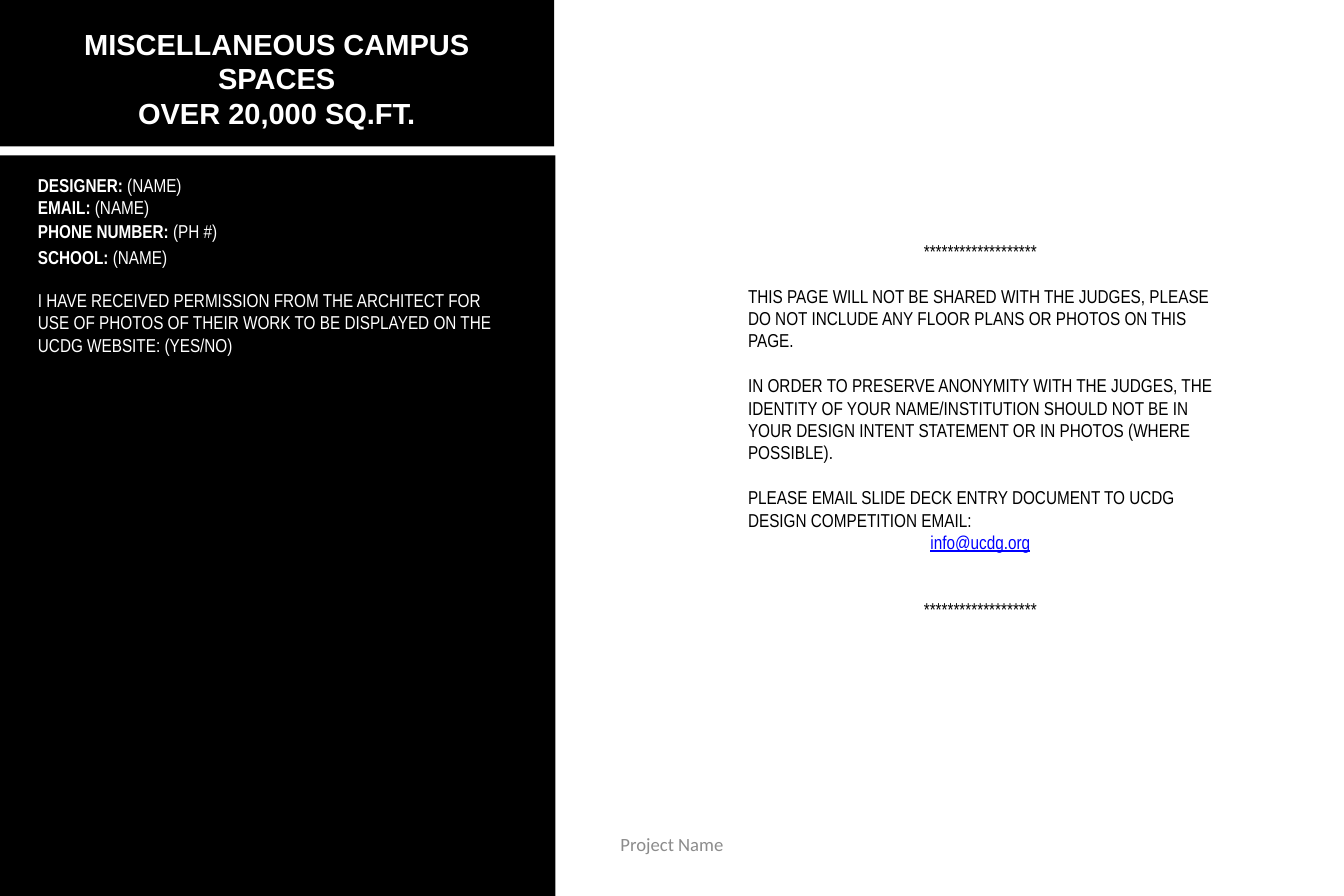
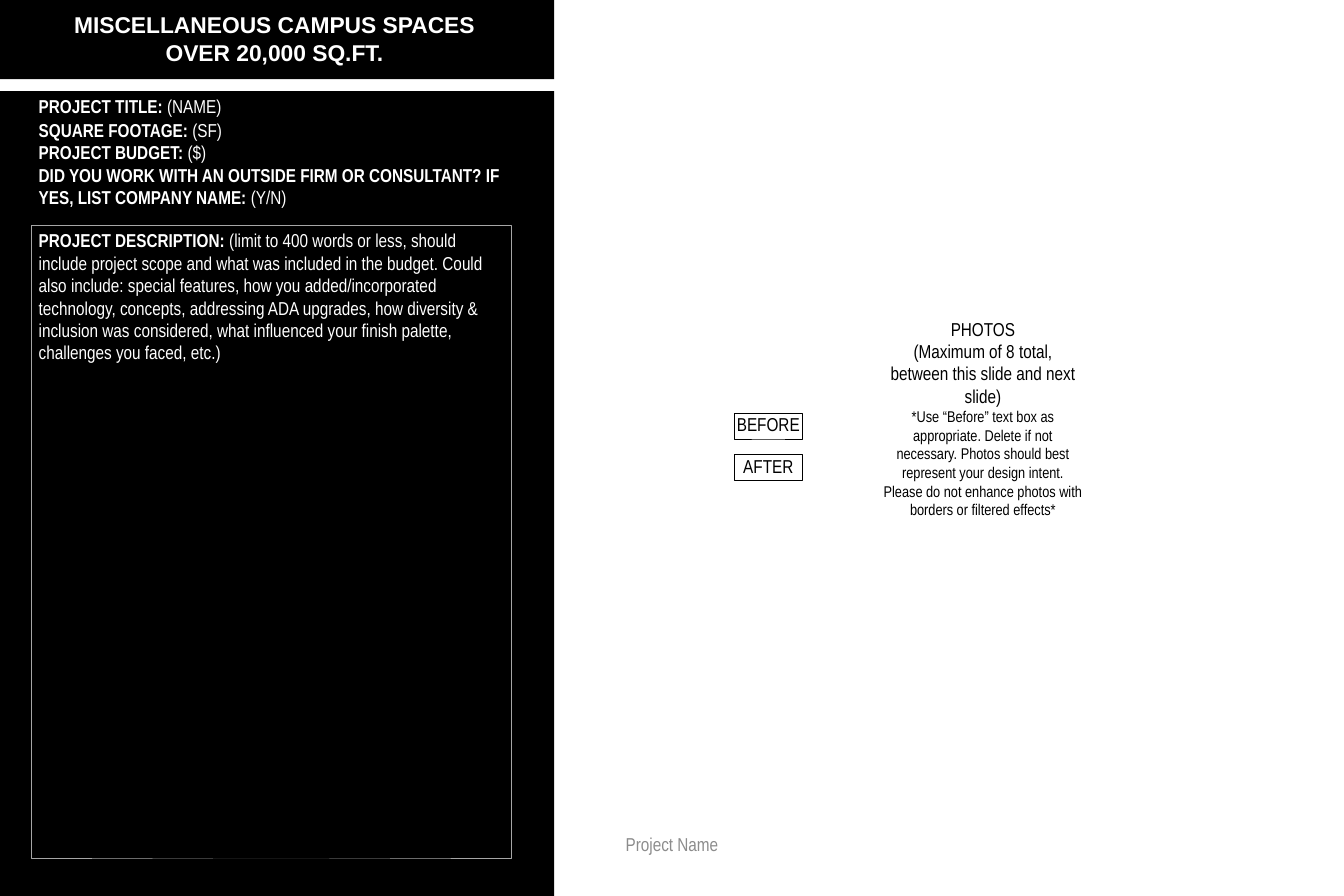
from pptx import Presentation
from pptx.dml.color import RGBColor
from pptx.enum.shapes import MSO_SHAPE
from pptx.enum.text import MSO_ANCHOR, PP_ALIGN
from pptx.util import Inches, Pt

BLACK, WHITE, GRAY, RULE, LINK = "000000", "FFFFFF", "8C8C8C", "A6A6A6", "0000FF"
NARROW = "Arial Narrow"
LINE = 21.6  # height of one 18 pt text line, in points
PANEL_W, FIELD_W = 7.42, 6.42
CENTER = PP_ALIGN.CENTER


def rgb(color):
    return RGBColor.from_string(color)


def field(label, value):
    """A paragraph with a bold label and a plain value."""
    return dict(runs=[(label + " ", {"bold": True}), (value, {})])


def para(text, align=None, before=0, **style):
    return dict(runs=[(text, style)], align=align, before=before)


class Deck:
    def __init__(self, width, height):
        self.prs = Presentation()
        self.prs.slide_width, self.prs.slide_height = Inches(width), Inches(height)
        self.height = height
        self.s = None

    def new_slide(self, title_h, title_size, title_box, panel_top, footer_font, panel_w=PANEL_W):
        """Title band, side panel and footer shared by all slides."""
        self.s = self.prs.slides.add_slide(self.prs.slide_layouts[6])
        self.box(0, 0, PANEL_W, title_h, fill=BLACK)
        self.box(0, panel_top, panel_w, self.height - panel_top, fill=BLACK)
        lines = ("MISCELLANEOUS CAMPUS SPACES", "OVER 20,000 SQ.FT.")
        self.text(*title_box, [para(t, CENTER, bold=True) for t in lines],
                  size=title_size, font="Arial", color=WHITE)
        self.text(6.12, 11.16, 5.76, 0.6, [para("Project Name", CENTER)],
                  font=footer_font, color=GRAY, inset=False)

    def box(self, x, y, w, h, fill=None, line=None, weight=0.75):
        sp = self.s.shapes.add_shape(MSO_SHAPE.RECTANGLE, Inches(x), Inches(y), Inches(w), Inches(h))
        sp.shadow.inherit = False
        if fill:
            sp.fill.solid()
            sp.fill.fore_color.rgb = rgb(fill)
        else:
            sp.fill.background()
        if line:
            sp.line.color.rgb = rgb(line)
            sp.line.width = Pt(weight)
        else:
            sp.line.fill.background()
        return sp

    def text(self, x, y, w, h, paras, **style):
        sp = self.s.shapes.add_textbox(Inches(x), Inches(y), Inches(w), Inches(h))
        self.fill_text(sp, paras, **style)

    def fill_text(self, sp, paras, size=18, font=NARROW, color=BLACK, inset=True):
        tf = sp.text_frame
        tf.word_wrap = True
        tf.vertical_anchor = MSO_ANCHOR.TOP
        if not inset:
            tf.margin_left = tf.margin_right = tf.margin_top = tf.margin_bottom = 0
        for i, item in enumerate(paras):
            p = tf.paragraphs[0] if i == 0 else tf.add_paragraph()
            p.alignment = item.get("align") or PP_ALIGN.LEFT
            p.space_before = Pt(item.get("before", 0))
            for content, style in item["runs"]:
                r = p.add_run()
                r.text = content
                r.font.name = font
                r.font.size = Pt(style.get("size", size))
                r.font.bold = style.get("bold", False)
                r.font.underline = style.get("underline", False)
                r.font.color.rgb = rgb(style.get("color", color))


def entrant_slide(deck):
    deck.new_slide(1.96, 28, (0.28, 0.3, 6.85, 1.51), 2.08, "Calibri", panel_w=7.44)

    # Contact fields
    contacts = [(2.28, "DESIGNER:", "(NAME)"), (2.58, "EMAIL:", "(NAME)"),
                (2.89, "PHONE NUMBER:", "(PH #)"), (3.25, "SCHOOL:", "(NAME)")]
    for y, label, value in contacts:
        deck.text(0.41, y, FIELD_W, 0.4, [field(label, value)], color=WHITE)
    deck.text(0.41, 3.82, FIELD_W, 1.01, [para(
        "I HAVE RECEIVED PERMISSION FROM THE ARCHITECT FOR USE OF PHOTOS OF THEIR WORK "
        "TO BE DISPLAYED ON THE UCDG WEBSITE: (YES/NO)")], color=WHITE)

    # Submission notice
    stars = "*" * 19
    deck.text(9.92, 3.16, FIELD_W, 5.55, [
        para(stars, CENTER),
        para("THIS PAGE WILL NOT BE SHARED WITH THE JUDGES, PLEASE DO NOT INCLUDE ANY "
             "FLOOR PLANS OR PHOTOS ON THIS PAGE.", before=LINE),
        para("IN ORDER TO PRESERVE ANONYMITY WITH THE JUDGES, THE IDENTITY OF YOUR "
             "NAME/INSTITUTION SHOULD NOT BE IN YOUR DESIGN INTENT STATEMENT OR IN PHOTOS "
             "(WHERE POSSIBLE).", before=LINE),
        para("PLEASE EMAIL SLIDE DECK ENTRY DOCUMENT TO UCDG DESIGN COMPETITION EMAIL:",
             before=LINE),
        para("info@ucdg.org", CENTER, color=LINK, underline=True),
        para(stars, CENTER, before=2 * LINE),
    ])


def project_slide(deck):
    deck.new_slide(1.06, 22, (0.25, 0.1, 6.85, 0.84), 1.22, NARROW)

    # Project facts
    deck.text(0.42, 1.22, FIELD_W, 0.71, [field("PROJECT TITLE:", "(NAME)")], color=WHITE)
    deck.text(0.42, 1.54, FIELD_W, 1.31, [
        field("SQUARE FOOTAGE:", "(SF)"),
        field("PROJECT BUDGET:", "($)"),
        field("DID YOU WORK WITH AN OUTSIDE FIRM OR CONSULTANT? IF YES, LIST COMPANY NAME:",
              "(Y/N)"),
    ], color=WHITE)

    # Project description
    description = deck.box(0.42, 3.02, FIELD_W, 8.47, line=RULE, weight=0.25)
    deck.fill_text(description, [field(
        "PROJECT DESCRIPTION:",
        "(limit to 400 words or less, should include project scope and what was included in "
        "the budget. Could also include: special features, how you added/incorporated "
        "technology, concepts, addressing ADA upgrades, how diversity & inclusion was "
        "considered, what influenced your finish palette, challenges you faced, etc.)")],
        color=WHITE)

    # Photo labels and instructions
    for i, label in enumerate(("BEFORE", "AFTER")):
        tag = deck.box(9.83, 5.53 + i * 0.56, 0.92, 0.35, line=BLACK)
        deck.fill_text(tag, [para(label, CENTER)], inset=False)
    deck.text(11.83, 4.25, 2.67, 2.92, [
        para("PHOTOS", CENTER),
        para("(Maximum of 8 total, between this slide and next slide)", CENTER),
        para("*Use “Before” text box as appropriate. Delete if not necessary. Photos should "
             "best represent your design intent. Please do not enhance photos with borders "
             "or filtered effects*", CENTER, size=15),
    ], inset=False)


def main():
    deck = Deck(18, 12)
    entrant_slide(deck)
    project_slide(deck)
    deck.prs.save("out.pptx")


if __name__ == "__main__":
    main()
